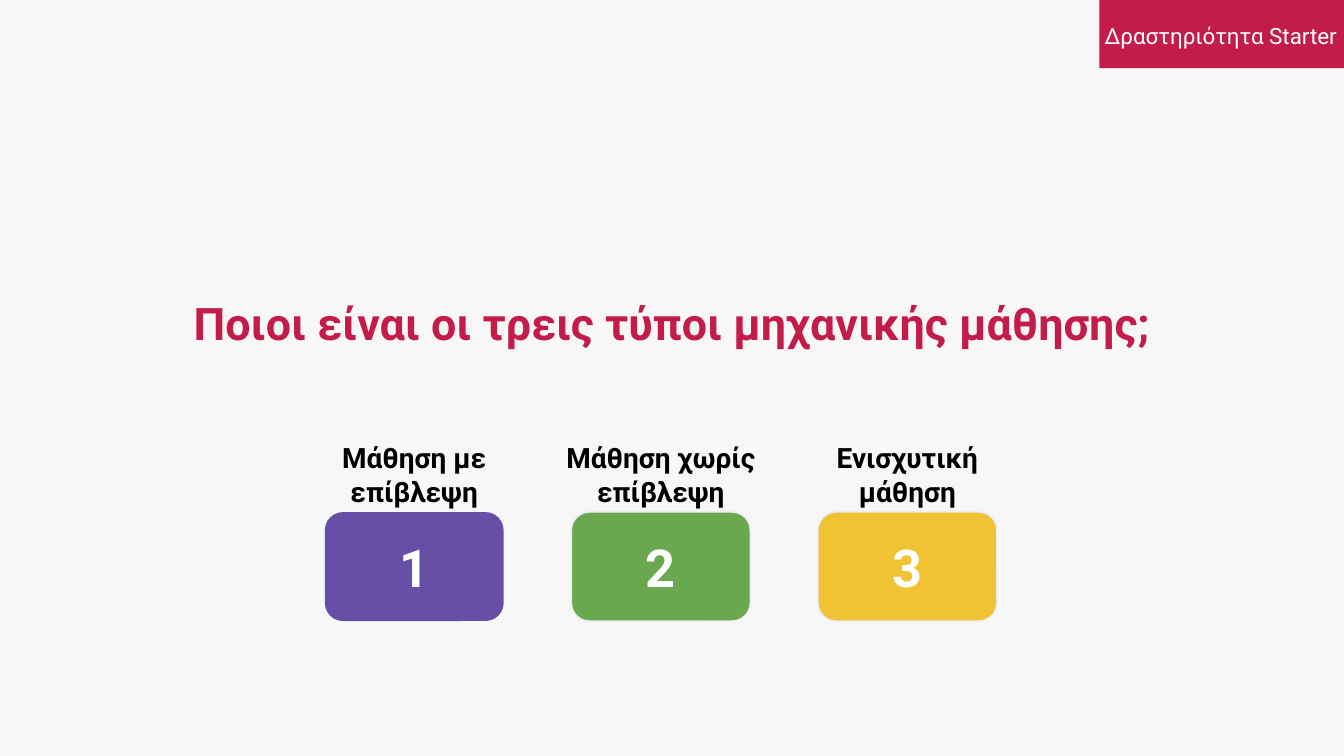
from pptx import Presentation
from pptx import util as u
from pptx.dml.color import RGBColor
from pptx.enum import shapes, text


def color(value):
    return RGBColor.from_string(value)


class Deck:
    font = "Roboto"
    accent = "C31C4A"
    white = "FFFFFF"
    border = "E9E9F3"

    def __init__(self, prs):
        self.s = prs.slides.add_slide(prs.slide_layouts[6])

    def background(self, fill):
        bg = self.s.background.fill
        bg.solid()
        bg.fore_color.rgb = color(fill)

    def shape(self, kind, x, y, w, h, fill, line=None):
        sp = self.s.shapes.add_shape(kind, u.Cm(x), u.Cm(y), u.Cm(w), u.Cm(h))
        sp.shadow.inherit = False
        sp.fill.solid()
        sp.fill.fore_color.rgb = color(fill)
        if line:
            sp.line.color.rgb = color(line)
            sp.line.width = u.Pt(0.75)
        else:
            sp.line.fill.background()
        return sp

    def set_text(self, sp, words, size, fill, bold=True, anchor=text.MSO_ANCHOR.MIDDLE):
        tf = sp.text_frame
        tf.word_wrap = True
        tf.vertical_anchor = anchor
        tf.margin_left = tf.margin_right = u.Cm(0.25)
        tf.margin_top = tf.margin_bottom = u.Cm(0.25)
        p = tf.paragraphs[0]
        p.text = words
        p.alignment = text.PP_ALIGN.CENTER
        p.font.name = self.font
        p.font.size = u.Pt(size)
        p.font.bold = bold
        p.font.color.rgb = color(fill)
        return p

    def label(self, x, y, w, h, *args, **style):
        sp = self.s.shapes.add_textbox(u.Cm(x), u.Cm(y), u.Cm(w), u.Cm(h))
        return self.set_text(sp, *args, **style)

    def card(self, x, y, w, h, number, fill, line):
        sp = self.shape(shapes.MSO_SHAPE.ROUNDED_RECTANGLE, x, y, w, h, fill, line)
        self.set_text(sp, number, 28, self.white)


def main():
    prs = Presentation()
    prs.slide_width, prs.slide_height = u.Cm(25.4), u.Cm(14.29)
    deck = Deck(prs)
    top = text.MSO_ANCHOR.TOP

    deck.background("F7F7F7")
    deck.shape(shapes.MSO_SHAPE.RECTANGLE, 20.78, 0, 4.62, 1.29, deck.accent)
    deck.label(0.86, 5.11, 23.67, 1.96,
               "Ποιοι είναι οι τρεις τύποι μηχανικής μάθησης;", 24, deck.accent)

    learning_types = [
        ("Μάθηση με επίβλεψη", 3.99, "674EA7", None),
        ("Μάθηση χωρίς επίβλεψη", 4.47, "6AA84F", deck.border),
        ("Ενισχυτική μάθηση", 4.83, "F1C232", deck.border),
    ]
    card_w, first_center, pitch = 3.38, 7.83, 4.66
    for i, (name, label_w, fill, line) in enumerate(learning_types):
        center = first_center + i * pitch
        deck.card(center - card_w / 2, 9.68, card_w, 2.06, str(i + 1), fill, line)
        deck.label(center - label_w / 2, 8.08, label_w, 1.8, name, 15, "000000", anchor=top)

    p = deck.label(20.6, 0.1, 4.95, 1.07, "Δραστηριότητα Starter", 12, deck.white,
                   bold=False, anchor=top)
    p.line_spacing = 1.15
    p.space_after = u.Pt(16)

    prs.save("out.pptx")


if __name__ == "__main__":
    main()
